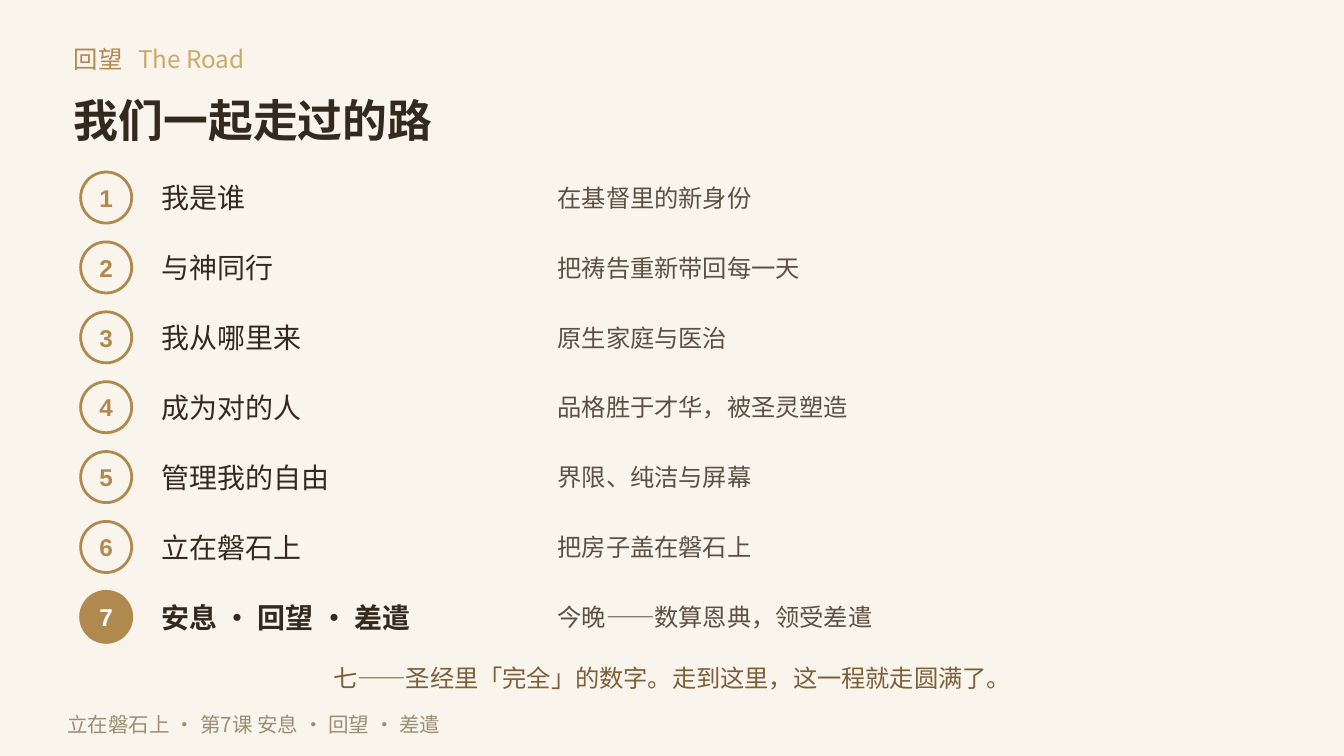
from lxml.etree import SubElement
from pptx import Presentation
from pptx.dml.color import RGBColor
from pptx.enum.shapes import MSO_SHAPE
from pptx.enum.text import MSO_ANCHOR, PP_ALIGN
from pptx.oxml.ns import qn
from pptx.util import Inches, Pt

# Content
KICKER = ("回望", "The Road")
TITLE = "我们一起走过的路"
LESSONS = [
    ("我是谁", "在基督里的新身份"),
    ("与神同行", "把祷告重新带回每一天"),
    ("我从哪里来", "原生家庭与医治"),
    ("成为对的人", "品格胜于才华，被圣灵塑造"),
    ("管理我的自由", "界限、纯洁与屏幕"),
    ("立在磐石上", "把房子盖在磐石上"),
    ("安息 · 回望 · 差遣", "今晚——数算恩典，领受差遣"),
]
CLOSING = "七——圣经里「完全」的数字。走到这里，这一程就走圆满了。"
FOOTER = "立在磐石上 · 第7课 安息 · 回望 · 差遣"

# Style
CJK, LATIN = "Noto Sans CJK SC", "Arial"
CREAM = RGBColor(0xFA, 0xF5, 0xEC)
GOLD = RGBColor(0xB0, 0x89, 0x4F)
LIGHT_GOLD = RGBColor(0xCB, 0xA9, 0x68)
INK = RGBColor(0x33, 0x29, 0x1E)
BROWN = RGBColor(0x5C, 0x50, 0x43)
BRONZE = RGBColor(0x7A, 0x5F, 0x37)
TAUPE = RGBColor(0x9C, 0x8E, 0x76)
WHITE = RGBColor(0xFF, 0xFF, 0xFF)

# Grid, in inches
LEFT = 0.55
BADGE_X, NAME_X, THEME_X = 0.6, 1.2, 4.15
FIRST_ROW, ROW_STEP, ROW_H = 1.28, 0.52, 0.38


def style_run(r, size, color, bold=False, font=CJK):
    r.font.size, r.font.bold, r.font.name = Pt(size), bold, font
    r.font.color.rgb = color
    SubElement(r._r.get_or_add_rPr(), qn("a:ea"), typeface=font)


def set_text(shape, text, size, color, bold=False, font=CJK, align=PP_ALIGN.LEFT, wrap=True):
    tf = shape.text_frame
    tf.margin_left = tf.margin_top = tf.margin_right = tf.margin_bottom = 0
    tf.vertical_anchor = MSO_ANCHOR.MIDDLE
    tf.word_wrap = wrap
    p = tf.paragraphs[0]
    p.text = text
    p.alignment = align
    style_run(p.runs[0], size, color, bold, font)
    return p


def add_text(s, x, y, w, h, text, size, color, **options):
    box = s.shapes.add_textbox(Inches(x), Inches(y), Inches(w), Inches(h))
    return set_text(box, text, size, color, **options)


def add_filled(s, kind, x, y, w, h, color):
    sp = s.shapes.add_shape(kind, x, y, w, h)
    sp.shadow.inherit = False
    sp.fill.solid()
    sp.fill.fore_color.rgb = color
    return sp


def add_badge(s, y, number, current):
    badge = add_filled(s, MSO_SHAPE.OVAL, Inches(BADGE_X), Inches(y),
                       Inches(ROW_H), Inches(ROW_H), GOLD if current else CREAM)
    badge.line.color.rgb = GOLD
    badge.line.width = Pt(1.5)
    set_text(badge, str(number), 13, WHITE if current else GOLD, bold=True,
             font=LATIN, align=PP_ALIGN.CENTER, wrap=False)


prs = Presentation()
prs.slide_width = Inches(10)
prs.slide_height = prs.slide_width * 9 // 16
s = prs.slides.add_slide(prs.slide_layouts[6])

# Cream ground
ground = add_filled(s, MSO_SHAPE.RECTANGLE, 0, 0, prs.slide_width, prs.slide_height, CREAM)
ground.line.fill.background()

# Heading: a tab stop separates the two languages
p = add_text(s, LEFT, 0.28, 8.5, 0.32, KICKER[0], 13, GOLD)
tabs = SubElement(p._p.get_or_add_pPr(), qn("a:tabLst"))
SubElement(tabs, qn("a:tab"), pos=str(Inches(0.48)), algn="l")
r = p.add_run()
r.text = "\t" + KICKER[1]
style_run(r, 13, LIGHT_GOLD)
add_text(s, LEFT, 0.68, 9, 0.42, TITLE, 24, INK, bold=True)

# Lessons, the last one being the current one
for i, (name, theme) in enumerate(LESSONS):
    y = FIRST_ROW + i * ROW_STEP
    current = i == len(LESSONS) - 1
    add_badge(s, y, i + 1, current)
    add_text(s, NAME_X, y, 2.8, ROW_H, name, 15, INK, bold=current)
    add_text(s, THEME_X, y, 5.2, ROW_H, theme, 13, BROWN)

# Closing line and footer
add_text(s, LEFT, 4.88, 8.9, 0.32, CLOSING, 13, BRONZE, align=PP_ALIGN.CENTER)
add_text(s, 0.5, 5.25, 7.5, 0.28, FOOTER, 11, TAUPE)

prs.save("out.pptx")
